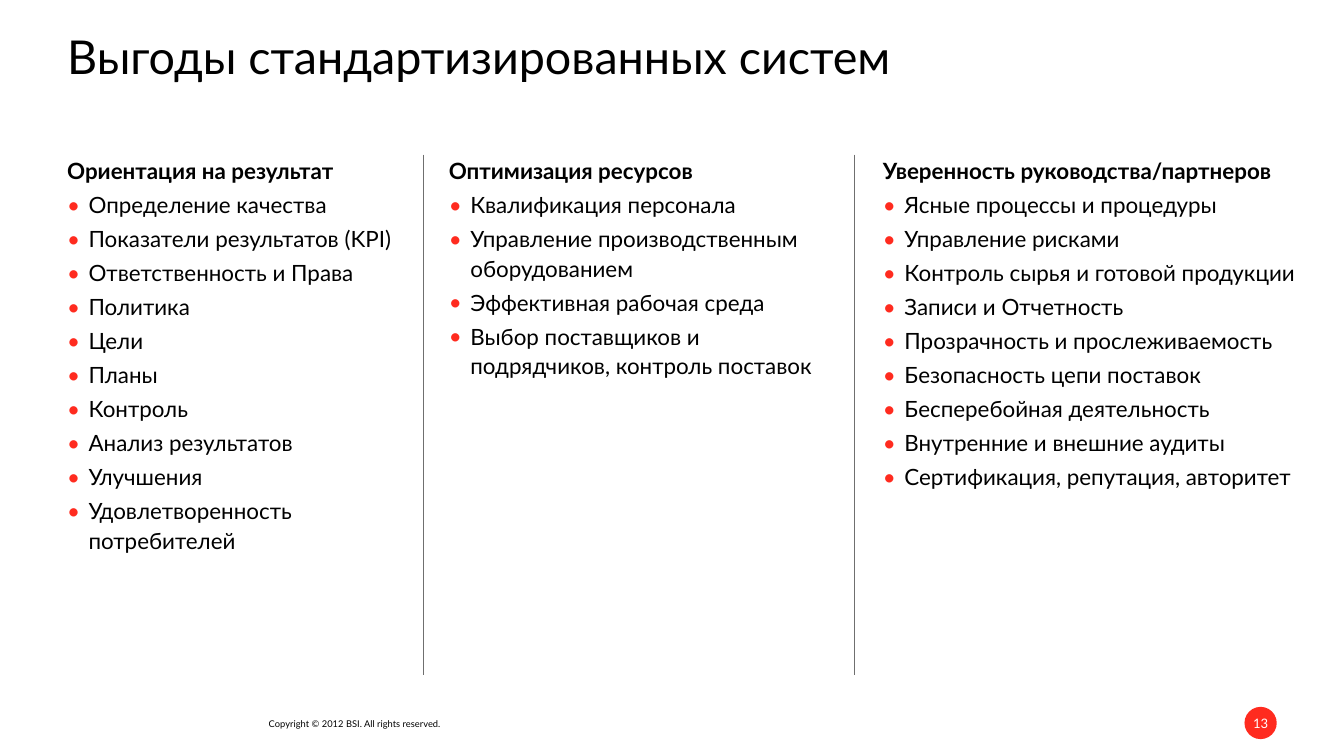
from lxml import etree
from pptx import Presentation
from pptx.dml.color import RGBColor
from pptx.enum.shapes import MSO_CONNECTOR, MSO_SHAPE
from pptx.enum.text import MSO_ANCHOR, MSO_AUTO_SIZE, PP_ALIGN
from pptx.oxml.ns import qn
from pptx.util import Inches, Pt

STRAIGHT = MSO_CONNECTOR.STRAIGHT
OVAL = MSO_SHAPE.OVAL
TOP, MIDDLE = MSO_ANCHOR.TOP, MSO_ANCHOR.MIDDLE
LEFT, CENTER = PP_ALIGN.LEFT, PP_ALIGN.CENTER
NO_AUTOFIT = MSO_AUTO_SIZE.NONE

FONT = "Lato"
COLORS = {"text": "000000", "accent": "FF2B1F", "rule": "6F6F6F", "white": "FFFFFF"}
SLIDE_WIDTH = 10
COLUMN_TOP, COLUMN_HEIGHT = 1.15, 3.88
INDENT = 0.16

# Left, width, heading and benefits of each column; \v is a line break
COLUMNS = [
    (0.5, 2.84, "Ориентация на результат", [
        "Определение качества",
        "Показатели результатов (KPI)",
        "Ответственность и Права",
        "Политика",
        "Цели",
        "Планы",
        "Контроль",
        "Анализ результатов",
        "Улучшения",
        "Удовлетворенность \vпотребителей",
    ]),
    (3.34, 3.1, "Оптимизация ресурсов", [
        "Квалификация персонала",
        "Управление производственным оборудованием",
        "Эффективная рабочая среда",
        "Выбор поставщиков и \vподрядчиков, контроль поставок",
    ]),
    (6.57, 3.43, "Уверенность руководства/партнеров", [
        "Ясные процессы и процедуры",
        "Управление рисками",
        "Контроль сырья и готовой продукции",
        "Записи и Отчетность",
        "Прозрачность и прослеживаемость",
        "Безопасность цепи поставок",
        "Бесперебойная деятельность",
        "Внутренние и внешние аудиты",
        "Сертификация, репутация, авторитет",
    ]),
]
DIVIDERS = [3.15, 6.36]


def rgb(name):
    return RGBColor.from_string(COLORS[name])


def apply_format(target, values):
    for key, value in values.items():
        setattr(target, key, value)


def format_frame(frame, anchor=TOP, wrap=True):
    apply_format(frame, {
        "margin_left": 0, "margin_top": 0, "margin_right": 0, "margin_bottom": 0,
        "auto_size": NO_AUTOFIT, "word_wrap": wrap, "vertical_anchor": anchor,
    })


def write(paragraph, text, size, color="text", bold=False, align=LEFT):
    paragraph.text = text
    paragraph.alignment = align
    for run in paragraph.runs:
        apply_format(run.font, {"name": FONT, "size": Pt(size), "bold": bold})
        run.font.color.rgb = rgb(color)


def add_bullet(paragraph):
    properties = paragraph._p.get_or_add_pPr()
    properties.set("marL", str(Inches(INDENT)))
    properties.set("indent", str(-Inches(INDENT)))
    bullet_color = etree.SubElement(properties, qn("a:buClr"))
    etree.SubElement(bullet_color, qn("a:srgbClr"), val=COLORS["accent"])
    etree.SubElement(properties, qn("a:buFont"), typeface=FONT)
    etree.SubElement(properties, qn("a:buChar"), char="•")


def add_title(slide, text):
    title = slide.shapes.title
    apply_format(title, {"left": Inches(0.5), "top": Inches(0.21),
                         "width": Inches(9), "height": Inches(0.39)})
    format_frame(title.text_frame)
    write(title.text_frame.paragraphs[0], text, 25)


def add_column(slide, left, width, heading, benefits):
    column = slide.shapes.add_textbox(
        Inches(left), Inches(COLUMN_TOP), Inches(width), Inches(COLUMN_HEIGHT))
    frame = column.text_frame
    format_frame(frame)
    write(frame.paragraphs[0], heading, 12, bold=True)
    frame.paragraphs[0].line_spacing = 1.1
    for benefit in benefits:
        item = frame.add_paragraph()
        add_bullet(item)
        apply_format(item, {"line_spacing": 1.1, "space_before": Pt(2.4)})
        write(item, benefit, 12)


def add_divider(slide, x):
    divider = slide.shapes.add_connector(
        STRAIGHT, Inches(x), Inches(COLUMN_TOP), Inches(x), Inches(5.02))
    divider.line.color.rgb = rgb("rule")
    divider.line.width = Pt(0.75)
    etree.SubElement(divider._element.spPr, qn("a:effectLst"))


def add_copyright(slide, text):
    notice = slide.shapes.add_textbox(Inches(2), Inches(5.34), Inches(1.34), Inches(0.09))
    format_frame(notice.text_frame, wrap=False)
    write(notice.text_frame.paragraphs[0], text, 5)


def add_page_badge(slide, number):
    badge = slide.shapes.add_shape(
        OVAL, Inches(9.26), Inches(5.26), Inches(0.24), Inches(0.24))
    badge.shadow.inherit = False
    badge.fill.solid()
    badge.fill.fore_color.rgb = rgb("accent")
    badge.line.fill.background()
    format_frame(badge.text_frame, MIDDLE, wrap=False)
    write(badge.text_frame.paragraphs[0], number, 7, "white", align=CENTER)


def main():
    presentation = Presentation()
    presentation.slide_width = Inches(SLIDE_WIDTH)
    presentation.slide_height = Inches(SLIDE_WIDTH * 9 / 16)
    slide = presentation.slides.add_slide(presentation.slide_layouts[5])

    # Footer
    add_copyright(slide, "Copyright © 2012 BSI. All rights reserved.")
    add_page_badge(slide, "13")

    # Title and benefit columns
    add_title(slide, "Выгоды стандартизированных систем")
    for column in COLUMNS:
        add_column(slide, *column)
    for x in DIVIDERS:
        add_divider(slide, x)

    presentation.save("out.pptx")


if __name__ == "__main__":
    main()
